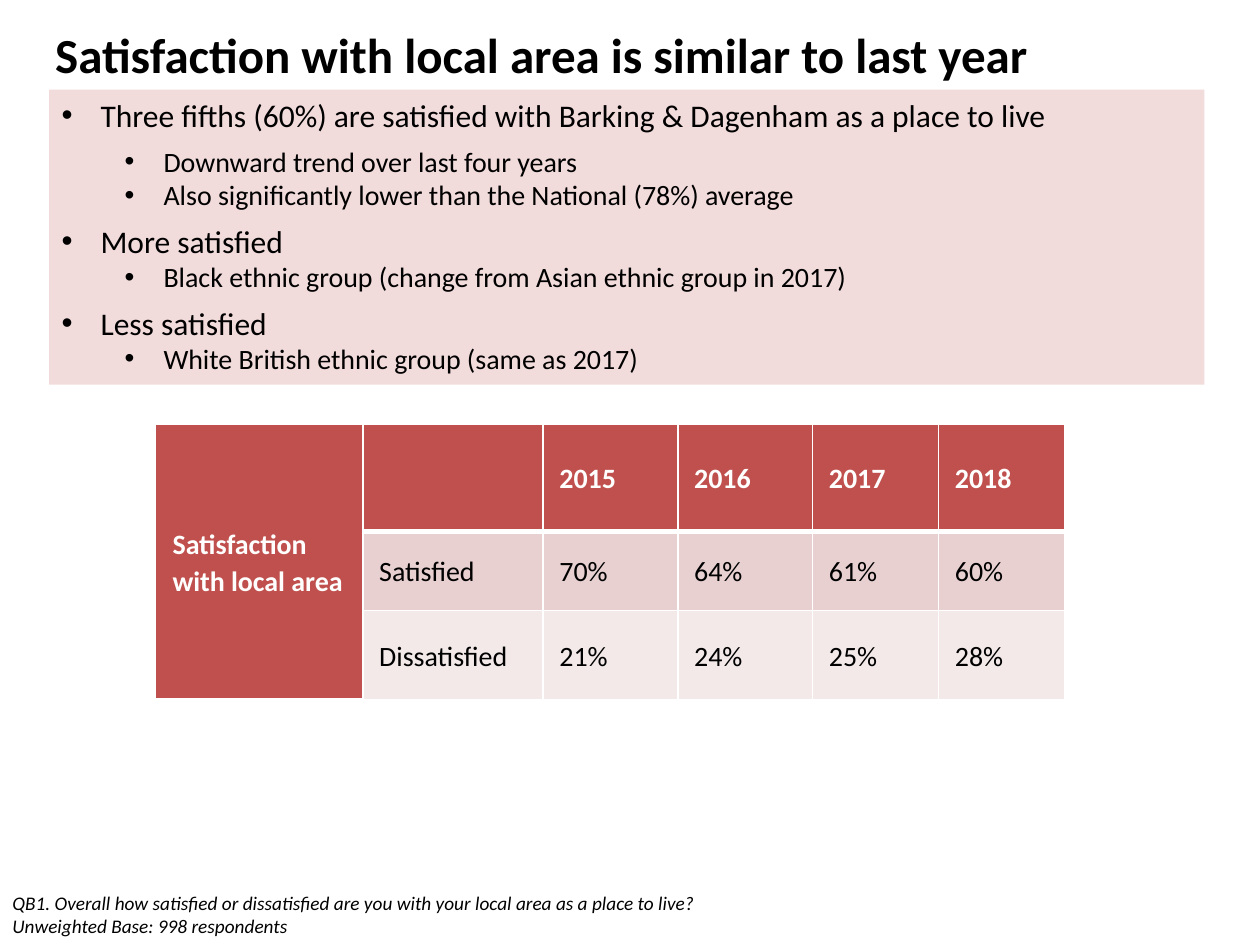
from dataclasses import dataclass
from typing import Any

from lxml.etree import SubElement
from pptx import Presentation
from pptx.dml.color import RGBColor
from pptx.enum.shapes import MSO_SHAPE
from pptx.enum.text import MSO_ANCHOR, MSO_AUTO_SIZE, PP_ALIGN
from pptx.oxml import parse_xml
from pptx.oxml.ns import nsdecls, qn
from pptx.util import Inches, Pt

WIDTH, HEIGHT = 10, 7.5
COLOURS = {
    "text": "000000",
    "white": "FFFFFF",
    "panel": "F2DCDB",
    "header": "C0504D",
    "satisfied": "E8D0D0",
    "dissatisfied": "F4E9E9",
}
BULLET_SIZES = (18, 16)
BULLET_INDENT, LEVEL_INDENT = 0.31, 0.5
COLUMN_WIDTHS = (1.65, 1.43, 1.07, 1.07, 1, 1)
ROW_HEIGHTS = (0.85, 0.63, 0.67)


@dataclass(frozen=True)
class Area:
    left: float
    top: float
    width: float
    height: float

    def lengths(self) -> tuple:
        return tuple(
            Inches(share * size)
            for share, size in zip(
                (self.left, self.top, self.width, self.height),
                (WIDTH, HEIGHT, WIDTH, HEIGHT),
            )
        )


@dataclass(frozen=True)
class Bullet:
    text: str
    level: int = 0
    space_before: float = 0


@dataclass(frozen=True)
class TableRow:
    fill: str
    text: str
    bold: bool
    border_below: float
    labels: tuple


TITLE_AREA = Area(0.034, 0.015, 0.843, 0.084)
FOOTNOTE_AREA = Area(0, 0.937, 0.562, 0.063)
PANEL_AREA = Area(0.039, 0.095, 0.917, 0.312)
TABLE_AREA = Area(0.123, 0.449, 0.722, 0.287)

BULLETS = (
    Bullet("Three fifths (60%) are satisfied with Barking & Dagenham as a place to live"),
    Bullet("Downward trend over last four years", 1, 6),
    Bullet("Also significantly lower than the National (78%) average", 1),
    Bullet("More satisfied", 0, 6),
    Bullet("Black ethnic group (change from Asian ethnic group in 2017)", 1),
    Bullet("Less satisfied", 0, 6),
    Bullet("White British ethnic group (same as 2017)", 1),
)
TABLE_ROWS = (
    TableRow("header", "white", True, 3,
             ("Satisfaction with local area", "", "2015", "2016", "2017", "2018")),
    TableRow("satisfied", "text", False, 1,
             ("", "Satisfied", "70%", "64%", "61%", "60%")),
    TableRow("dissatisfied", "text", False, 1,
             ("", "Dissatisfied", "21%", "24%", "25%", "28%")),
)


def colour(name: str) -> RGBColor:
    return RGBColor.from_string(COLOURS[name])


def set_values(target: Any, values: dict) -> None:
    for name, value in values.items():
        setattr(target, name, value)


def write_span(para: Any, text: str, size: float, shade: str = "text", **values: bool) -> None:
    span = para.add_run()
    span.text = text
    set_values(span.font, {"name": "Calibri", "size": Pt(size), **values})
    span.font.color.rgb = colour(shade)


def next_para(frame: Any, index: int) -> Any:
    return frame.add_paragraph() if index else frame.paragraphs[0]


def add_text(page: Any, area: Area, lines: tuple, size: float, frame_values: dict,
             **font_values: bool) -> None:
    frame = page.shapes.add_textbox(*area.lengths()).text_frame
    set_values(frame, frame_values)
    for index, line in enumerate(lines):
        write_span(next_para(frame, index), line, size, **font_values)


def add_bullet_panel(page: Any, area: Area, bullets: tuple) -> None:
    panel = page.shapes.add_shape(MSO_SHAPE.RECTANGLE, *area.lengths())
    panel.shadow.inherit = False
    panel.fill.solid()
    panel.fill.fore_color.rgb = colour("panel")
    panel.line.fill.background()
    frame = panel.text_frame
    set_values(frame, {"word_wrap": True, "vertical_anchor": MSO_ANCHOR.TOP})
    for index, bullet in enumerate(bullets):
        para = next_para(frame, index)
        set_values(para, {"level": bullet.level, "alignment": PP_ALIGN.LEFT,
                          "space_before": Pt(bullet.space_before)})
        properties = para._p.get_or_add_pPr()
        properties.set("marL", str(Inches(BULLET_INDENT + LEVEL_INDENT * bullet.level)))
        properties.set("indent", str(Inches(-BULLET_INDENT)))
        SubElement(properties, qn("a:buFont"), typeface="Arial")
        SubElement(properties, qn("a:buChar"), char="•")
        write_span(para, bullet.text, BULLET_SIZES[bullet.level])


def draw_borders(cell: Any, below: float, above: float) -> None:
    properties = cell._tc.get_or_add_tcPr()
    sides = {"lnL": 1, "lnR": 1, "lnT": above, "lnB": below}
    for index, (side, width) in enumerate(sides.items()):
        properties.insert(index, parse_xml(
            f'<a:{side} {nsdecls("a")} w="{Pt(width)}"><a:solidFill>'
            f'<a:srgbClr val="{COLOURS["white"]}"/></a:solidFill></a:{side}>'
        ))


def add_satisfaction_table(page: Any, area: Area, rows: tuple) -> None:
    table = page.shapes.add_table(len(rows), len(COLUMN_WIDTHS), *area.lengths()).table
    set_values(table, {"first_row": False, "horz_banding": False})
    for column, width in zip(table.columns, COLUMN_WIDTHS):
        column.width = Inches(width)
    for row, height in zip(table.rows, ROW_HEIGHTS):
        row.height = Inches(height)
    above = 1
    for row_index, row in enumerate(rows):
        for column_index, label in enumerate(row.labels):
            cell = table.cell(row_index, column_index)
            side, edge = (0.13, 0) if column_index else (0.14, 0.07)
            set_values(cell, {
                "vertical_anchor": MSO_ANCHOR.MIDDLE,
                "margin_left": Inches(side), "margin_right": Inches(side),
                "margin_top": Inches(edge), "margin_bottom": Inches(edge),
            })
            cell.fill.solid()
            cell.fill.fore_color.rgb = colour(row.fill if column_index else "header")
            draw_borders(cell, row.border_below, above)
            if label:
                para = cell.text_frame.paragraphs[0]
                para.line_spacing = 1.07
                write_span(para, label, 16, row.text, bold=row.bold)
        above = row.border_below
    table.cell(0, 0).merge(table.cell(len(rows) - 1, 0))


def main() -> None:
    deck = Presentation()
    set_values(deck, {"slide_width": Inches(WIDTH), "slide_height": Inches(HEIGHT)})
    page = deck.slides.add_slide(deck.slide_layouts[6])
    add_text(page, TITLE_AREA, ("Satisfaction with local area is similar to last year",), 28,
             {"word_wrap": True, "vertical_anchor": MSO_ANCHOR.MIDDLE}, bold=True)
    add_text(page, FOOTNOTE_AREA, (
        "QB1. Overall how satisfied or dissatisfied are you with your local area as a place to live?",
        "Unweighted Base: 998 respondents",
    ), 11, {"word_wrap": False, "auto_size": MSO_AUTO_SIZE.SHAPE_TO_FIT_TEXT}, italic=True)
    add_bullet_panel(page, PANEL_AREA, BULLETS)
    add_satisfaction_table(page, TABLE_AREA, TABLE_ROWS)
    deck.save("out.pptx")


if __name__ == "__main__":
    main()
